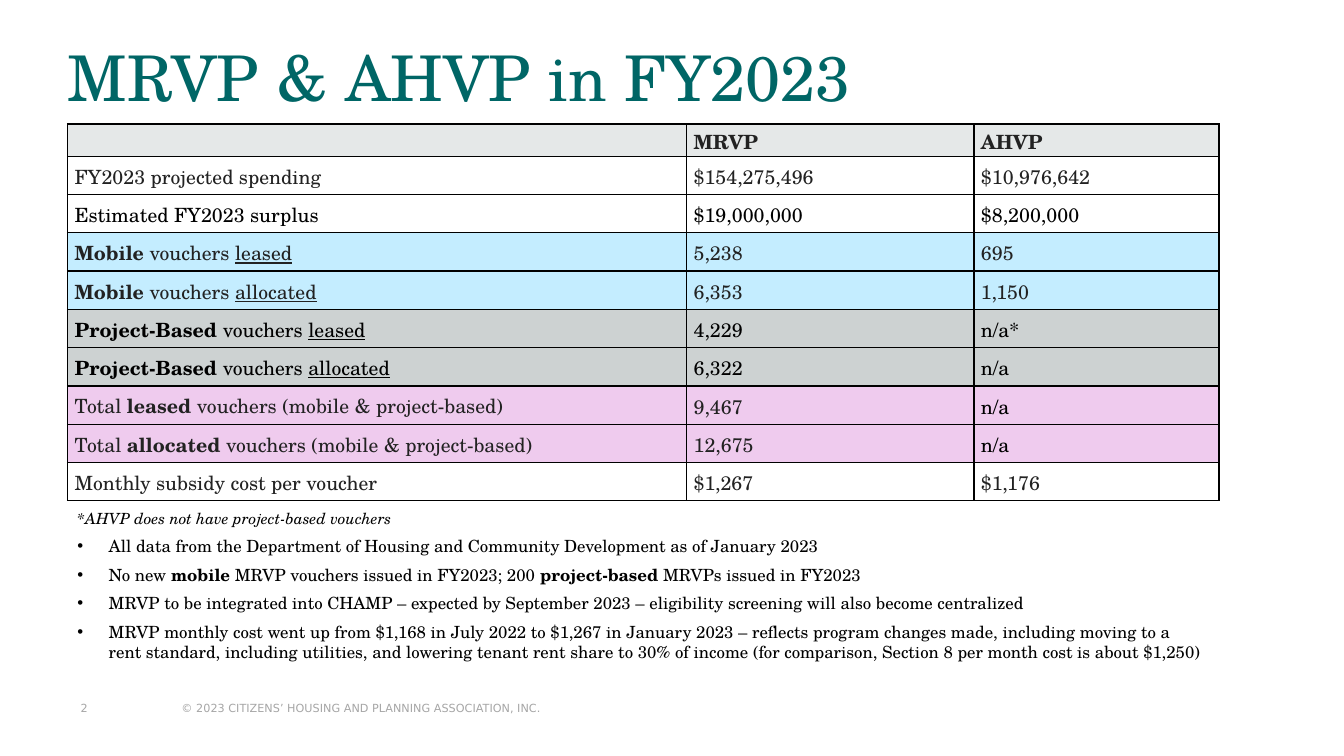
from lxml import etree
from pptx import Presentation
from pptx.dml.color import RGBColor
from pptx.enum.text import MSO_ANCHOR
from pptx.oxml.ns import qn
from pptx.util import Inches, Pt

MIDDLE = MSO_ANCHOR.MIDDLE
WIDTH, HEIGHT = 13.33, 7.5
LEFT = 0.67
COLUMNS = [6.14, 2.85, 2.43]
HEADER_ROW, BODY_ROW = 0.32, 0.38
SERIF, SANS = "TeX Gyre Schola", "DejaVu Sans"
BLACK, INK, TEAL, GREY = "000000", "222222", "006666", "A6A6A6"
WHITE, PALE, BLUE, SILVER, PINK = "FFFFFF", "E5E8E8", "C4EDFF", "CDD2D2", "EFCBEE"

# Each row: fill, label colour, colours of the two values, cells.
# A span is plain text or (text, font values).
BOLD, UNDER = {"bold": True}, {"underline": True}
ROWS = [
    (PALE, INK, INK, INK, [[], [("MRVP", BOLD)], [("AHVP", BOLD)]]),
    (WHITE, INK, INK, INK, [["FY2023 projected spending"], ["$154,275,496"], ["$10,976,642"]]),
    (WHITE, BLACK, BLACK, BLACK, [["Estimated FY2023 surplus"], ["$19,000,000"], ["$8,200,000"]]),
    (BLUE, INK, INK, INK,
     [[("Mobile", BOLD), " vouchers ", ("leased", UNDER)], ["5,238"], ["695"]]),
    (BLUE, INK, INK, INK,
     [[("Mobile", BOLD), " vouchers ", ("allocated", UNDER)], ["6,353"], ["1,150"]]),
    (SILVER, BLACK, BLACK, BLACK,
     [[("Project-Based", BOLD), " vouchers ", ("leased", UNDER)], ["4,229"], ["n/a*"]]),
    (SILVER, BLACK, BLACK, BLACK,
     [[("Project-Based", BOLD), " vouchers ", ("allocated", UNDER)], ["6,322"], ["n/a"]]),
    (PINK, INK, INK, BLACK,
     [["Total ", ("leased", BOLD), " vouchers (mobile & project-based)"], ["9,467"], ["n/a"]]),
    (PINK, INK, INK, BLACK,
     [["Total ", ("allocated", BOLD), " vouchers (mobile & project-based)"], ["12,675"], ["n/a"]]),
    (WHITE, INK, INK, INK, [["Monthly subsidy cost per voucher"], ["$1,267"], ["$1,176"]]),
]
FOOTNOTE = "*AHVP does not have project-based vouchers"
BULLETS = [
    ["All data from the Department of Housing and Community Development as of January 2023"],
    ["No new ", ("mobile", BOLD), " MRVP vouchers issued in FY2023; 200 ",
     ("project-based", BOLD), " MRVPs issued in FY2023"],
    ["MRVP to be integrated into CHAMP – expected by September 2023 – "
     "eligibility screening will also become centralized"],
    ["MRVP monthly cost went up from $1,168 in July 2022 to $1,267 in January 2023 – "
     "reflects program changes made, including moving to a rent standard, including utilities, "
     "and lowering tenant rent share to 30% of income "
     "(for comparison, Section 8 per month cost is about $1,250)"],
]


def color(value):
    return RGBColor.from_string(value)


def set_values(target, values):
    for name, value in values.items():
        setattr(target, name, value)


def write(para, spans, size, ink, face=SERIF, **spacing):
    """Fill a paragraph with spans that share size, colour and typeface."""
    set_values(para, spacing)
    set_values(para.font, {"size": Pt(size), "name": face})
    for span in spans:
        text, extra = (span, {}) if isinstance(span, str) else span
        run = para.add_run()
        run.text = text
        set_values(run.font, {"size": Pt(size), "name": face, **extra})
        run.font.color.rgb = color(ink)


def add_box(page, left, top, width, height, across=0.1, down=0.05):
    box = page.shapes.add_textbox(*map(Inches, (left, top, width, height)))
    set_values(box.text_frame, {
        "word_wrap": True, "margin_left": Inches(across), "margin_right": Inches(across),
        "margin_top": Inches(down), "margin_bottom": Inches(down)})
    return box.text_frame


def add_bullet(para):
    props = para._p.get_or_add_pPr()
    props.set("marL", str(Inches(0.31)))
    props.set("indent", str(-Inches(0.31)))
    tint = etree.SubElement(props, qn("a:buClr"))
    etree.SubElement(tint, qn("a:srgbClr"), val=BLACK)
    etree.SubElement(props, qn("a:buFont"), typeface="Arial")
    etree.SubElement(props, qn("a:buChar"), char="•")


def add_tab(para, position):
    tabs = etree.SubElement(para._p.get_or_add_pPr(), qn("a:tabLst"))
    etree.SubElement(tabs, qn("a:tab"), pos=str(Inches(position)), algn="l")


def style_cell(cell, fill):
    set_values(cell, {"margin_left": Inches(0.07), "margin_right": Inches(0.07),
                      "margin_top": 0, "margin_bottom": 0, "vertical_anchor": MIDDLE})
    props = cell._tc.get_or_add_tcPr()
    for side in ("lnL", "lnR", "lnT", "lnB"):
        border = etree.SubElement(props, qn(f"a:{side}"), w=str(Pt(1)))
        paint = etree.SubElement(border, qn("a:solidFill"))
        etree.SubElement(paint, qn("a:srgbClr"), val=BLACK)
    cell.fill.solid()
    cell.fill.fore_color.rgb = color(fill)


def add_voucher_table(page):
    heights = [HEADER_ROW] + [BODY_ROW] * (len(ROWS) - 1)
    frame = page.shapes.add_table(
        len(ROWS), len(COLUMNS), Inches(LEFT), Inches(1.23),
        Inches(sum(COLUMNS)), Inches(sum(heights)))
    table = frame.table
    for column, width in zip(table.columns, COLUMNS):
        column.width = Inches(width)
    for row, height, (fill, *inks, cells) in zip(table.rows, heights, ROWS):
        row.height = Inches(height)
        for cell, ink, spans in zip(row.cells, inks, cells):
            style_cell(cell, fill)
            write(cell.text_frame.paragraphs[0], spans, 14, ink, line_spacing=1.07)


def add_notes_block(page):
    frame = add_box(page, LEFT, 5, sum(COLUMNS), 1.63)
    write(frame.paragraphs[0], [(FOOTNOTE, {"italic": True})], 11, BLACK, space_after=Pt(6))
    for spans in BULLETS:
        para = frame.add_paragraph()
        add_bullet(para)
        write(para, spans, 12, BLACK, space_after=Pt(6))


def add_footer(page):
    para = add_box(page, LEFT, 6.89, 6.24, 0.34, 0.13, 0.07).paragraphs[0]
    add_tab(para, 1)
    write(para, ["2\t© 2023 CITIZENS’ HOUSING AND PLANNING ASSOCIATION, INC."], 8, GREY, SANS)


def main():
    deck = Presentation()
    deck.slide_width, deck.slide_height = Inches(WIDTH), Inches(HEIGHT)
    page = deck.slides.add_slide(deck.slide_layouts[6])
    # Title
    title = add_box(page, LEFT, 0.31, 12, 0.9, 0, 0)
    title.vertical_anchor = MIDDLE
    write(title.paragraphs[0], ["MRVP & AHVP in FY2023"], 45, TEAL)
    # Body and footer
    add_voucher_table(page)
    add_notes_block(page)
    add_footer(page)
    deck.save("out.pptx")


if __name__ == "__main__":
    main()
